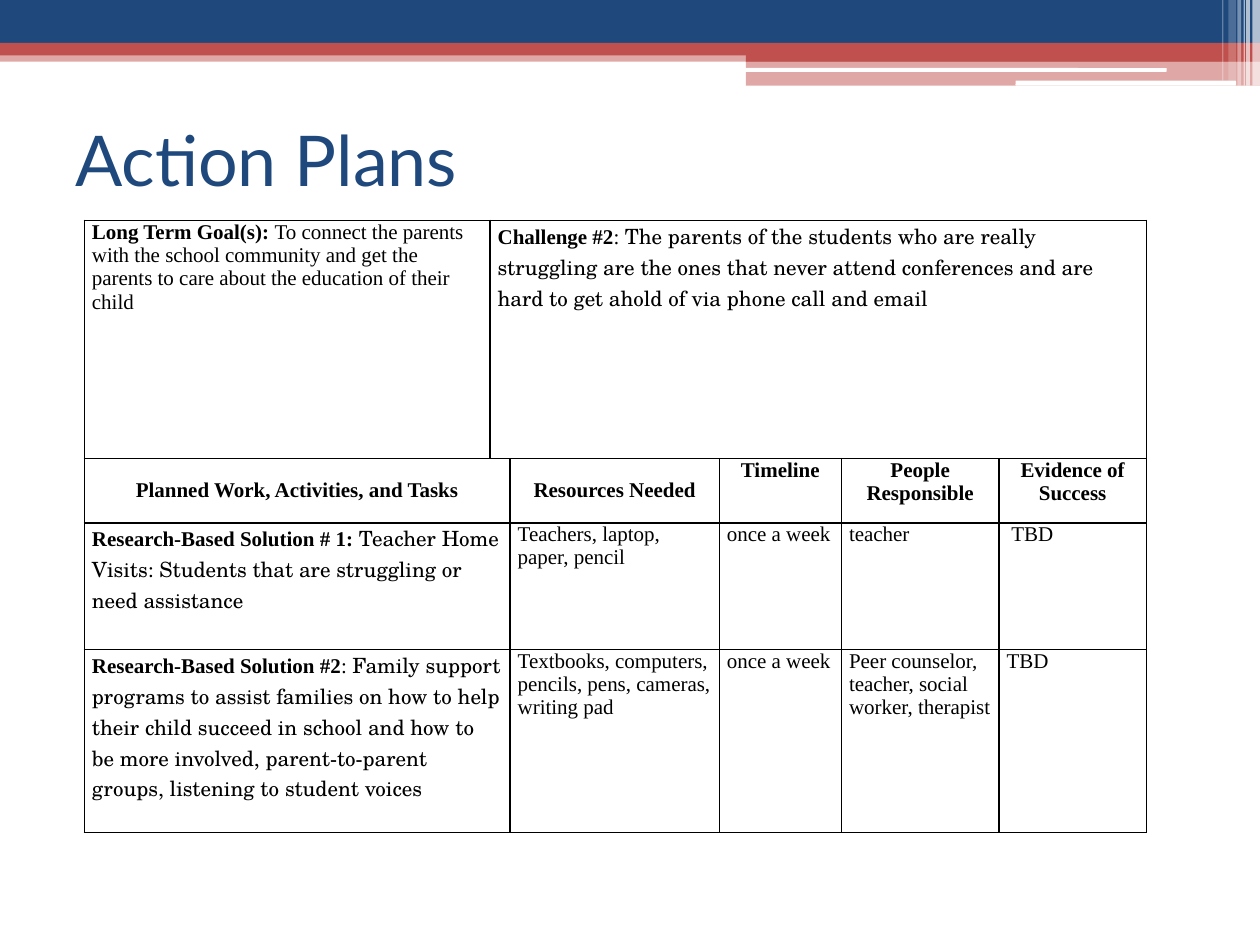
from dataclasses import dataclass
from typing import NamedTuple

from lxml.etree import SubElement
from pptx import Presentation
from pptx.dml.color import RGBColor
from pptx.enum.shapes import MSO_SHAPE
from pptx.enum.text import MSO_ANCHOR, PP_ALIGN
from pptx.oxml.ns import qn
from pptx.util import Inches, Pt


@dataclass(frozen=True)
class Theme:
    navy: str = "1F497D"
    red: str = "C0504D"
    white: str = "FFFFFF"
    black: str = "000000"
    head: str = "Lato"
    body: str = "Times New Roman"
    book: str = "TeX Gyre Schola"
    big: int = 40
    small: int = 12
    edge: int = 1


class Bar(NamedTuple):
    """A band of colour; its box is in percent of the slide's size."""
    x: float
    y: float
    w: float
    h: float
    color: str
    alpha: int = 100
    round: bool = False


class Run(NamedTuple):
    text: str
    bold: bool = False
    font: str = "Times New Roman"


class Cell(NamedTuple):
    row: int
    col: int
    runs: list[Run]
    span: int = 1
    gap: int = 3
    align: PP_ALIGN = PP_ALIGN.LEFT
    anchor: MSO_ANCHOR = MSO_ANCHOR.TOP


LOOK = Theme()
WIDE, HIGH = Inches(10), Inches(7.5)
MID = PP_ALIGN.CENTER

# Header bands, then the pale strips at the right edge
BARS = [
    Bar(0, 5.33, 100, 1.2, LOOK.red, 50),
    Bar(0, 0, 100, 4.53, LOOK.navy),
    Bar(0, 4.53, 100, 1.33, LOOK.red),
    Bar(59.2, 5.2, 40.8, 1.33, LOOK.red),
    Bar(59.2, 6.4, 40.8, 2.67, LOOK.red, 50),
    Bar(59.1, 7.2, 33.5, 0.4, LOOK.white, round=True),
    Bar(80.6, 8.53, 17.5, 0.53, LOOK.white, round=True),
] + [
    Bar(x, 0, w, h, LOOK.white, alpha)
    for x, w, h, alpha in [
        (99.4, 0.6, 9.07, 65), (98.9, 0.3, 9.07, 65), (98.7, 0.1, 9.07, 60),
        (98.2, 0.3, 9.07, 40), (97.5, 0.6, 8.53, 20), (97, 0.1, 8.53, 30),
    ]
]

# Table grid in percent of the slide's size
COLS = [32.2, 1.4, 16.6, 9.7, 12.5, 11.7]
ROWS = [25.2, 6.8, 13.4, 19.4]

CELLS = [
    Cell(0, 0, [Run("Long Term Goal(s): ", True),
                Run("To connect the parents with the school community and get "
                    "the parents to care about the education of their child")],
         gap=6),
    Cell(0, 1, [Run("Challenge #2", True), Run(": "),
                Run("The parents of the students who are really struggling are "
                    "the ones that never attend conferences and are hard to get "
                    "ahold of via phone call and email", font=LOOK.book)],
         span=5, gap=6),
    Cell(1, 0, [Run("Planned Work, Activities, and Tasks", True)], span=2,
         align=MID, anchor=MSO_ANCHOR.MIDDLE),
    Cell(1, 2, [Run("Resources Needed", True)],
         align=MID, anchor=MSO_ANCHOR.MIDDLE),
    Cell(2, 0, [Run("Research-Based Solution # 1: ", True),
                Run("Teacher Home Visits: Students that are struggling or need "
                    "assistance", font=LOOK.book)], span=2),
    Cell(3, 0, [Run("Research-Based Solution #2", True), Run(": "),
                Run("Family support programs to assist families on how to help "
                    "their child succeed in school and how to be more involved, "
                    "parent-to-parent groups, listening to student voices",
                    font=LOOK.book)], span=2),
] + [
    Cell(1, col, [Run(text, True)], align=MID)
    for col, text in enumerate(
        ["Timeline", "People Responsible", "Evidence of Success"], 3)
] + [
    Cell(row, col, [Run(text)])
    for row, texts in [
        (2, ["Teachers, laptop, paper, pencil", "once a week", "teacher",
             " TBD"]),
        (3, ["Textbooks, computers, pencils, pens, cameras, writing pad",
             "once a week", "Peer counselor, teacher, social worker, therapist",
             "TBD"]),
    ]
    for col, text in enumerate(texts, 2)
]


def across(share: float) -> int:
    return round(WIDE * share / 100)


def down(share: float) -> int:
    return round(HIGH * share / 100)


def apply(item, form: dict) -> None:
    for name, value in form.items():
        setattr(item, name, value)


def draw_bar(slide, bar: Bar) -> None:
    kind = MSO_SHAPE.ROUNDED_RECTANGLE if bar.round else MSO_SHAPE.RECTANGLE
    shape = slide.shapes.add_shape(kind, across(bar.x), down(bar.y),
                                   across(bar.w), down(bar.h))
    shape.shadow.inherit = False
    shape.line.fill.background()
    shape.fill.solid()
    shape.fill.fore_color.rgb = RGBColor.from_string(bar.color)
    if bar.alpha < 100:
        tint = shape.fill._xPr.find(qn("a:solidFill"))[0]
        SubElement(tint, qn("a:alpha"), val=str(bar.alpha * 1000))


def add_run(para, run: Run, size: int, color: str) -> None:
    part = para.add_run()
    part.text = run.text
    apply(part.font, {"name": run.font, "size": Pt(size), "bold": run.bold})
    part.font.color.rgb = RGBColor.from_string(color)


def draw_title(slide, text: str) -> None:
    box = slide.shapes.add_textbox(across(5), down(8.93), across(90), down(15.6))
    apply(box.text_frame, {"word_wrap": True,
                           "vertical_anchor": MSO_ANCHOR.MIDDLE})
    add_run(box.text_frame.paragraphs[0], Run(text, font=LOOK.head),
            LOOK.big, LOOK.navy)


def frame(cell) -> None:
    """Clear the fill and rule all four sides."""
    props = cell._tc.get_or_add_tcPr()
    for side in ("lnL", "lnR", "lnT", "lnB"):
        line = SubElement(props, qn(f"a:{side}"), w=str(Pt(LOOK.edge)))
        fill = SubElement(line, qn("a:solidFill"))
        SubElement(fill, qn("a:srgbClr"), val=LOOK.black)
    cell.fill.background()


def fill_cell(table, item: Cell) -> None:
    cell = table.cell(item.row, item.col)
    if item.span > 1:
        cell.merge(table.cell(item.row, item.col + item.span - 1))
    apply(cell, {"margin_left": Inches(0.06), "margin_right": Inches(0.06),
                 "margin_top": 0, "margin_bottom": 0,
                 "vertical_anchor": item.anchor})
    para = cell.text_frame.paragraphs[0]
    apply(para, {"alignment": item.align, "space_before": Pt(item.gap),
                 "space_after": Pt(item.gap)})
    for run in item.runs:
        add_run(para, run, LOOK.small, LOOK.black)


def draw_table(slide) -> None:
    table = slide.shapes.add_table(
        len(ROWS), len(COLS), across(6.7), down(23.33),
        across(sum(COLS)), down(sum(ROWS))).table
    apply(table, {"first_row": False, "horz_banding": False})
    for col, share in zip(table.columns, COLS):
        col.width = across(share)
    for row, share in zip(table.rows, ROWS):
        row.height = down(share)
    for cell in table.iter_cells():
        frame(cell)
    for item in CELLS:
        fill_cell(table, item)


def main() -> None:
    deck = Presentation()
    apply(deck, {"slide_width": WIDE, "slide_height": HIGH})
    slide = deck.slides.add_slide(deck.slide_layouts[6])
    for bar in BARS:
        draw_bar(slide, bar)
    draw_title(slide, "Action Plans")
    draw_table(slide)
    deck.save("out.pptx")


if __name__ == "__main__":
    main()
